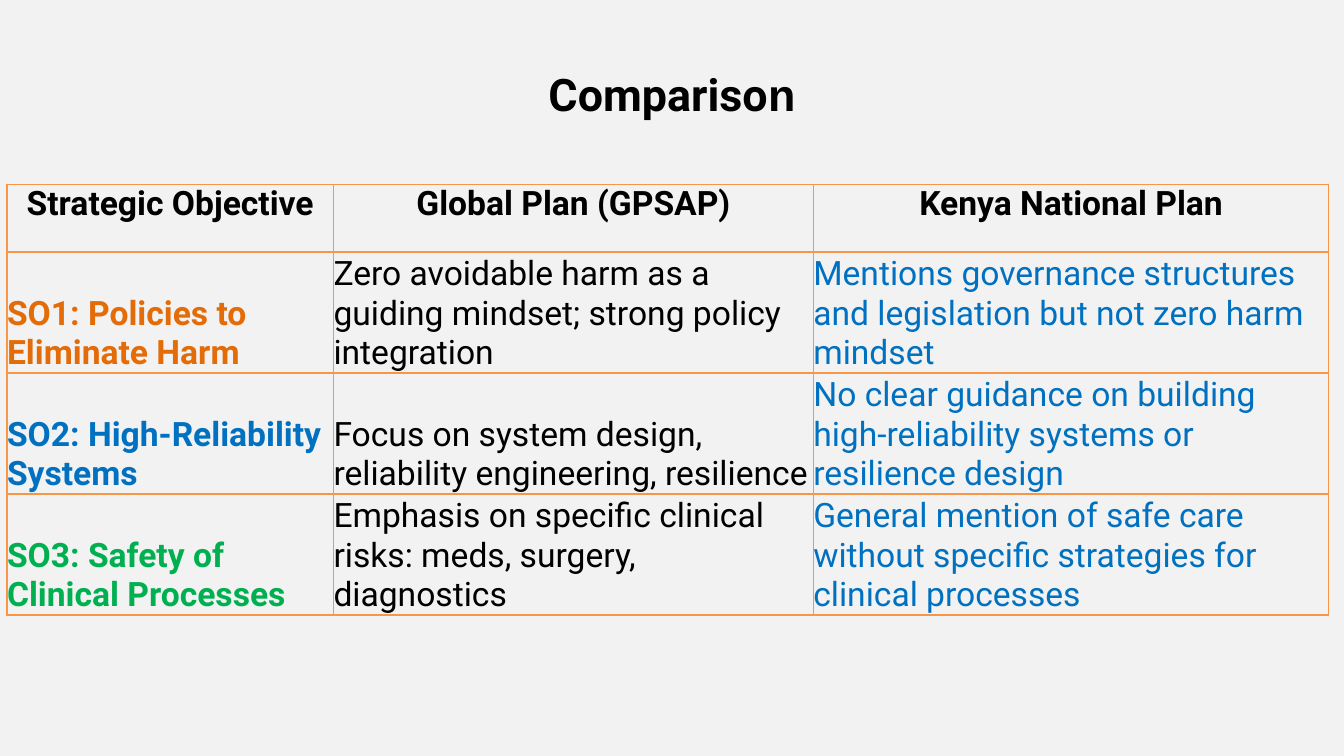
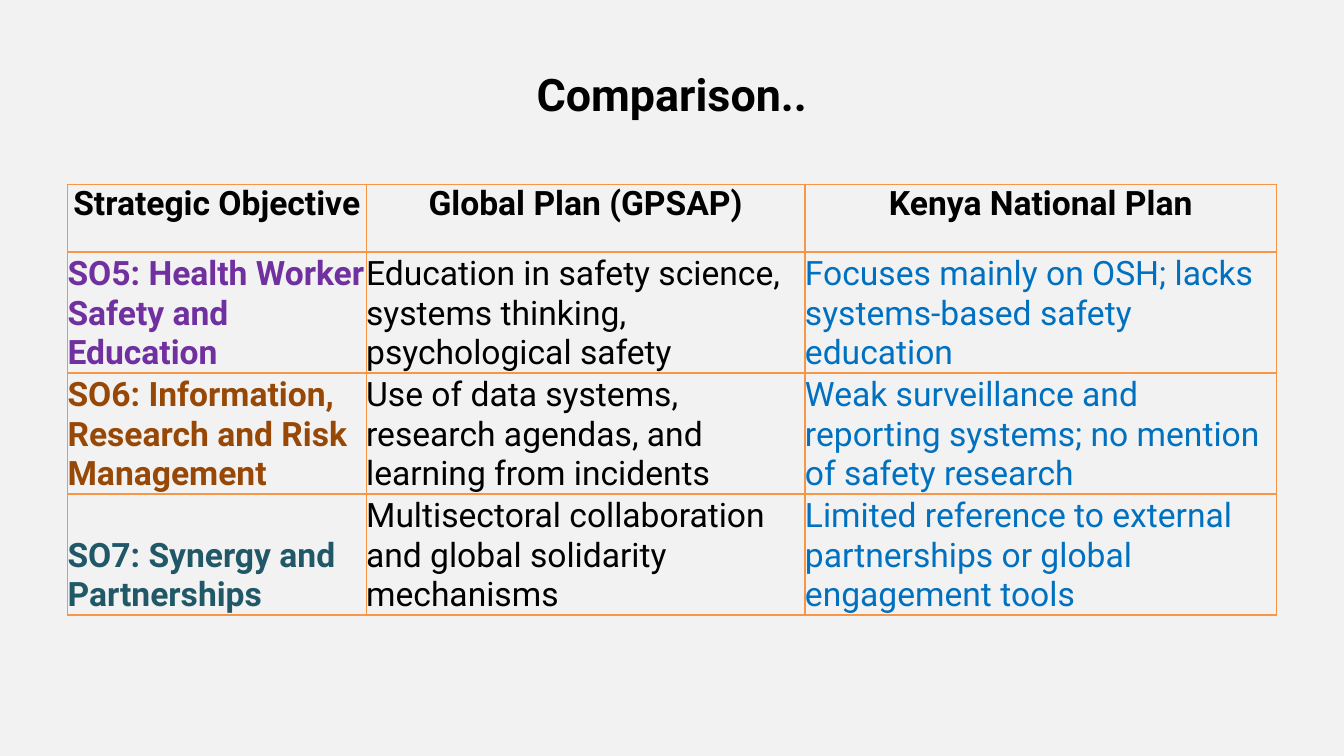
from dataclasses import dataclass

from lxml.etree import SubElement
from pptx import Presentation
from pptx.dml.color import RGBColor
from pptx.enum.text import MSO_VERTICAL_ANCHOR as Anchor, PP_PARAGRAPH_ALIGNMENT as Align
from pptx.oxml.ns import qn
from pptx.util import Inches, Pt


@dataclass(frozen=True)
class Theme:
    font: str = "Roboto"
    fallback_font: str = "Arial"
    title_size: int = 32
    table_size: int = 24
    background: str = "F2F2F2"
    text: str = "000000"
    national: str = "0070C0"
    border: str = "F79646"
    orange: str = "E36C09"
    blue: str = "0070C0"
    green: str = "00B050"
    purple: str = "7030A0"
    brown: str = "974806"
    teal: str = "205867"


THEME = Theme()
SLIDE_WIDTH, SLIDE_HEIGHT = Inches(13.33), Inches(7.5)
TITLE_LEFT, TITLE_TOP, TITLE_WIDTH, TITLE_HEIGHT = 0.05, 0.04, 0.9, 1 / 6
TABLE_TOP = Inches(1.83)
HEADER_HEIGHT, BODY_HEIGHT = Inches(0.67), Inches(1.18)
COLUMN_SHARES = (0.247, 0.363, 0.39)
HEADERS = ("Strategic Objective", "Global Plan (GPSAP)", "Kenya National Plan")

# Each page: title spans, table left and width in inches, body rows with the objective's colour.
PAGES = (
    {
        "title": (("Compariso", THEME.font), ("n", THEME.fallback_font)),
        "left": 0.07,
        "width": 13.11,
        "rows": (
            (THEME.orange, "SO1: Policies to Eliminate Harm",
             "Zero avoidable harm as a guiding mindset; strong policy integration",
             "Mentions governance structures and legislation but not zero harm mindset"),
            (THEME.blue, "SO2: High-Reliability Systems",
             "Focus on system design, reliability engineering, resilience",
             "No clear guidance on building high-reliability systems or resilience design"),
            (THEME.green, "SO3: Safety of Clinical Processes",
             "Emphasis on specific clinical risks: meds, surgery, diagnostics",
             "General mention of safe care without specific strategies for clinical processes"),
        ),
    },
    {
        "title": (("Comparison..", THEME.font),),
        "left": 0.67,
        "width": 11.99,
        "rows": (
            (THEME.purple, "SO5: Health Worker Safety and Education",
             "Education in safety science, systems thinking, psychological safety",
             "Focuses mainly on OSH; lacks systems-based safety education"),
            (THEME.brown, "SO6: Information, Research and Risk Management",
             "Use of data systems, research agendas, and learning from incidents",
             "Weak surveillance and reporting systems; no mention of safety research"),
            (THEME.teal, "SO7: Synergy and Partnerships",
             "Multisectoral collaboration and global solidarity mechanisms",
             "Limited reference to external partnerships or global engagement tools"),
        ),
    },
)


def set_all(target, values):
    for name, value in values.items():
        setattr(target, name, value)


def add_span(para, text, size, color=THEME.text, bold=False, font=THEME.font):
    span = para.add_run()
    span.text = text
    set_all(span.font, {"name": font, "size": Pt(size), "bold": bold})
    span.font.color.rgb = RGBColor.from_string(color)


def add_title(page, spans):
    box = page.shapes.add_textbox(
        int(SLIDE_WIDTH * TITLE_LEFT), int(SLIDE_HEIGHT * TITLE_TOP),
        int(SLIDE_WIDTH * TITLE_WIDTH), int(SLIDE_HEIGHT * TITLE_HEIGHT))
    set_all(box.text_frame, {"word_wrap": True, "vertical_anchor": Anchor.MIDDLE})
    para = box.text_frame.paragraphs[0]
    para.alignment = Align.CENTER
    for text, font in spans:
        add_span(para, text, THEME.title_size, bold=True, font=font)


def add_borders(cell):
    properties = cell._tc.get_or_add_tcPr()
    for side in ("lnL", "lnR", "lnT", "lnB"):
        line = SubElement(properties, qn(f"a:{side}"), w=str(Pt(1)))
        fill = SubElement(line, qn("a:solidFill"))
        SubElement(fill, qn("a:srgbClr"), val=THEME.border)


def fill_cell(cell, text, color, bold, is_header):
    margins = dict.fromkeys(("margin_left", "margin_top", "margin_right", "margin_bottom"), 0)
    anchor = Anchor.TOP if is_header else Anchor.BOTTOM
    set_all(cell, {**margins, "vertical_anchor": anchor})
    add_borders(cell)
    cell.fill.background()
    para = cell.text_frame.paragraphs[0]
    para.alignment = Align.CENTER if is_header else Align.LEFT
    add_span(para, text, THEME.table_size, color, bold)


def add_comparison_table(page, left, width, body):
    height = HEADER_HEIGHT + BODY_HEIGHT * len(body)
    table = page.shapes.add_table(
        len(body) + 1, len(HEADERS), Inches(left), TABLE_TOP, Inches(width), height).table
    set_all(table, {"first_row": False, "horz_banding": False})
    for column, share in zip(table.columns, COLUMN_SHARES):
        column.width = Inches(width * share)
    for index, row in enumerate(table.rows):
        row.height = BODY_HEIGHT if index else HEADER_HEIGHT
    for cell, text in zip(table.rows[0].cells, HEADERS):
        fill_cell(cell, text, THEME.text, bold=True, is_header=True)
    for index, (objective_color, *texts) in enumerate(body, start=1):
        colors = (objective_color, THEME.text, THEME.national)
        for column, (text, color) in enumerate(zip(texts, colors)):
            fill_cell(table.cell(index, column), text, color, bold=column == 0, is_header=False)


def main():
    deck = Presentation()
    set_all(deck, {"slide_width": SLIDE_WIDTH, "slide_height": SLIDE_HEIGHT})
    backdrop = deck.slide_master.background.fill
    backdrop.solid()
    backdrop.fore_color.rgb = RGBColor.from_string(THEME.background)
    for content in PAGES:
        page = deck.slides.add_slide(deck.slide_layouts[6])
        add_title(page, content["title"])
        add_comparison_table(page, content["left"], content["width"], content["rows"])
    deck.save("out.pptx")


if __name__ == "__main__":
    main()
